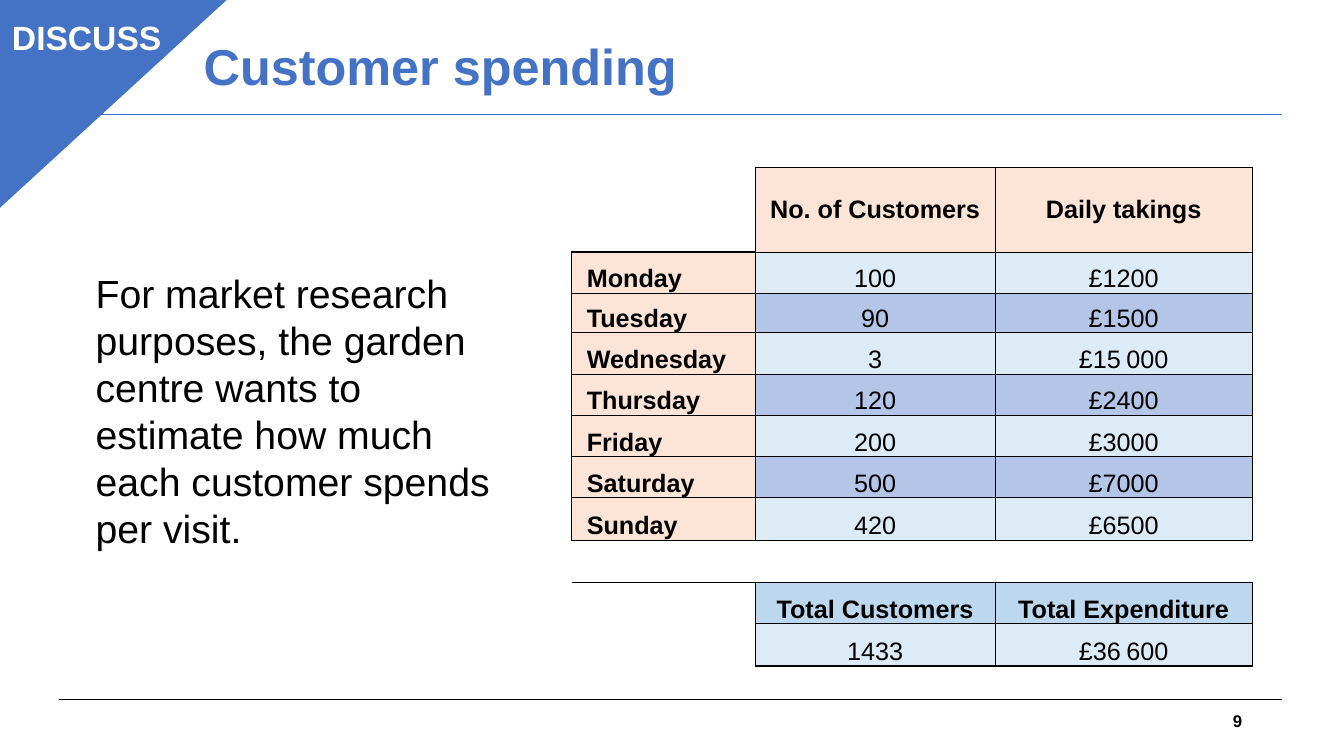
from pptx import Presentation
from pptx.dml.color import RGBColor
from pptx.enum.shapes import MSO_CONNECTOR as Link, MSO_SHAPE as Form
from pptx.enum.text import MSO_ANCHOR as Anchor, MSO_AUTO_SIZE as Fit, PP_ALIGN as Align
from pptx.oxml.ns import qn
from pptx.util import Pt
from lxml.etree import SubElement as Sub

PX = 9144
BLUE = RGBColor(0x44, 0x72, 0xC4)
BLACK = RGBColor(0x00, 0x00, 0x00)
WHITE = RGBColor(0xFF, 0xFF, 0xFF)
PEACH = RGBColor(0xFC, 0xE4, 0xD6)
PALE = RGBColor(0xDD, 0xEB, 0xF7)
MID = RGBColor(0xB4, 0xC6, 0xE7)
SKY = RGBColor(0xBD, 0xD7, 0xEE)
GAP = chr(160)
PLAIN = "{2D5ABB26-0587-4C30-8999-92F81FD0307C}"


def style(para, size, color, bold, align):
    font = para.font
    font.name, font.size, font.bold = "Arial", Pt(size), bold
    font.color.rgb = color
    para.alignment = align


def label(shapes, text, area, size, color, bold, align, anchor, fit):
    box = shapes.add_textbox(*[n * PX for n in area])
    frame = box.text_frame
    frame.word_wrap = True
    frame.auto_size = fit
    frame.vertical_anchor = anchor
    frame.text = text
    style(frame.paragraphs[0], size, color, bold, align)


deck = Presentation()
deck.slide_width, deck.slide_height = 1333 * PX, 750 * PX
slide = deck.slides.add_slide(deck.slide_layouts[5])
shapes = slide.shapes

title = shapes.title
title.left, title.top, title.width, title.height = [n * PX for n in (192, 13, 523, 111)]
frame = title.text_frame
frame.text = "Customer spending"
frame.auto_size = Fit.NONE
frame.vertical_anchor = Anchor.MIDDLE
frame.paragraphs[0].line_spacing = 0.9
style(frame.paragraphs[0], 36, BLUE, True, Align.LEFT)

for y, color in ((694, BLACK), (114, BLUE)):
    rule = shapes.add_connector(Link.STRAIGHT, 59 * PX, y * PX, 1272 * PX, y * PX)
    rule.line.color.rgb = color
    rule.line.width = Pt(0.75)
    Sub(rule.element.spPr, qn("a:effectLst"))

label(shapes, "9", (942, 695, 300, 40), 12, BLACK, True, Align.RIGHT, Anchor.MIDDLE, Fit.NONE)

badge = shapes.add_group_shape().shapes
corner = badge.add_shape(Form.ISOSCELES_TRIANGLE, -3 * PX, -2 * PX, 229 * PX, 210 * PX)
corner.adjustments[0] = 0
corner.element.spPr.xfrm.set("flipV", "1")
corner.shadow.inherit = False
corner.fill.solid()
corner.fill.fore_color.rgb = BLUE
corner.line.color.rgb = BLUE
corner.line.width = Pt(1)
label(badge, "DISCUSS", (-1, 12, 174, 50), 24, WHITE, True,
      Align.CENTER, Anchor.TOP, Fit.SHAPE_TO_FIT_TEXT)

rows = [
    ("", "No. of Customers", "Daily takings"),
    ("Monday", "100", "£1200"),
    ("Tuesday", "90", "£1500"),
    ("Wednesday", "3", f"£15{GAP}000"),
    ("Thursday", "120", "£2400"),
    ("Friday", "200", "£3000"),
    ("Saturday", "500", "£7000"),
    ("Sunday", "420", "£6500"),
    ("", "", ""),
    ("", "Total Customers", "Total Expenditure"),
    ("", "1433", f"£36{GAP}600"),
]
fills = [PEACH] + [PALE, MID] * 3 + [PALE, None, SKY, PALE]
wides = (182, 238, 255)
highs = (84, 41, 39, 41, 41, 41, 41, 42, 42, 41, 42)
heads = (0, 9)
sides = (("a:lnL", 0, -1), ("a:lnR", 0, 1), ("a:lnT", -1, 0), ("a:lnB", 1, 0))

holder = shapes.add_table(len(rows), 3, 567 * PX, 166 * PX, sum(wides) * PX, sum(highs) * PX)
table = holder.table
table.first_row = table.horz_banding = False
table._tbl.tblPr.find(qn("a:tableStyleId")).text = PLAIN
for col, wide in zip(table.columns, wides):
    col.width = wide * PX
for row, high in zip(table.rows, highs):
    row.height = high * PX

used = {(r, c) for r, row in enumerate(rows) for c, text in enumerate(row) if text}
for r, row in enumerate(rows):
    for c, text in enumerate(row):
        cell = table.cell(r, c)
        cell.margin_left = (15 if c == 0 else 1) * PX
        cell.margin_right = cell.margin_top = PX
        cell.margin_bottom = 0
        cell.vertical_anchor = Anchor.MIDDLE if r == 0 else Anchor.BOTTOM
        para = cell.text_frame.paragraphs[0]
        style(para, 18, BLACK, c == 0 or r in heads, Align.LEFT if c == 0 else Align.CENTER)
        for part in filter(None, text.partition(GAP)):
            run = para.add_run()
            run.text = part
            if part == GAP:
                run.font.size = Pt(14)
        props = cell._tc.get_or_add_tcPr()
        for tag, down, over in sides:
            count = ((r, c) in used) + ((r + down, c + over) in used)
            if count:
                edge = Sub(props, qn(tag), w=str(Pt(1 if count == 1 else 0.5)))
                Sub(Sub(edge, qn("a:solidFill")), qn("a:srgbClr"), val=str(BLACK))
        if text:
            cell.fill.solid()
            cell.fill.fore_color.rgb = PEACH if c == 0 else fills[r]
        else:
            cell.fill.background()

label(shapes, "For market research purposes, the garden centre wants to estimate "
      "how much each customer spends per visit.", (85, 262, 435, 293), 28, BLACK, False,
      Align.LEFT, Anchor.TOP, Fit.SHAPE_TO_FIT_TEXT)

deck.save("out.pptx")
